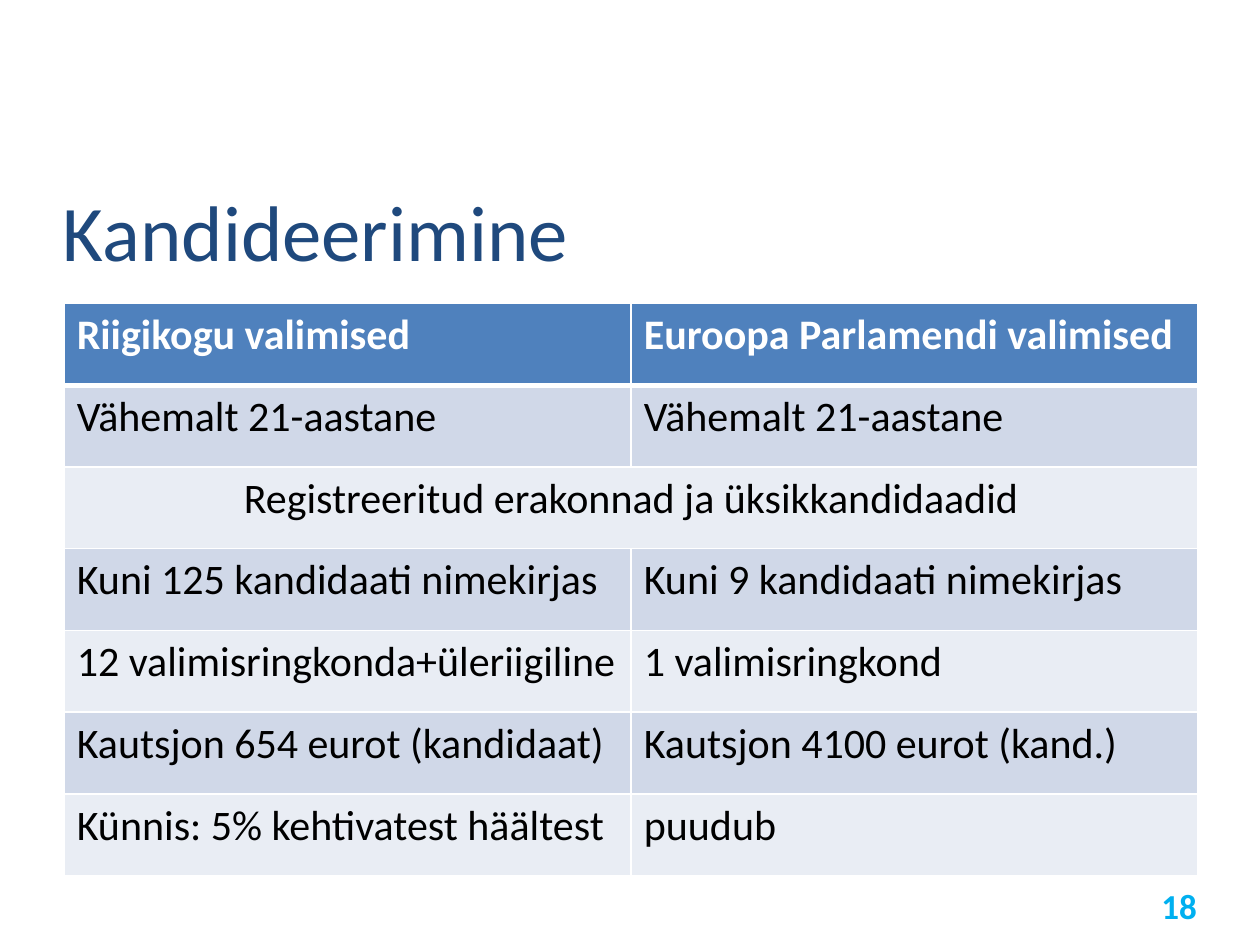
"""Build the slide that compares the rules of candidacy in two elections."""
from dataclasses import dataclass

from lxml.etree import SubElement
from pptx import Presentation
from pptx.dml.color import RGBColor
from pptx.enum.text import MSO_ANCHOR as Anchor, PP_ALIGN as Align
from pptx.oxml.ns import qn
from pptx.slide import Slide
from pptx.util import Inches, Pt

ROWS = [
    ("Riigikogu valimised", "Euroopa Parlamendi valimised"),
    ("Vähemalt 21-aastane", "Vähemalt 21-aastane"),
    ("Registreeritud erakonnad ja üksikkandidaadid",),
    ("Kuni 125 kandidaati nimekirjas", "Kuni 9 kandidaati nimekirjas"),
    ("12 valimisringkonda+üleriigiline", "1 valimisringkond"),
    ("Kautsjon 654 eurot (kandidaat)", "Kautsjon 4100 eurot (kand.)"),
    ("Künnis: 5% kehtivatest häältest", "puudub"),
]


def color(value):
    return RGBColor.from_string(value)


@dataclass
class SlideBuilder:
    slide: Slide
    font: str = "Calibri"
    title_color: str = "1F497D"
    number_color: str = "00B0F0"
    header_fill: str = "4F81BD"
    band_fills: tuple = ("E9EDF4", "D0D8E8")
    white: str = "FFFFFF"
    black: str = "000000"

    def add_run(self, frame, text, size, text_color, bold=False, align=Align.LEFT):
        paragraph = frame.paragraphs[0]
        paragraph.alignment = align
        run = paragraph.add_run()
        run.text = text
        run.font.name = self.font
        run.font.size = Pt(size)
        run.font.bold = bold
        run.font.color.rgb = color(text_color)

    def text(self, box, text, size, text_color, **style):
        shape = self.slide.shapes.add_textbox(*map(Inches, box))
        frame = shape.text_frame
        frame.word_wrap = True
        frame.vertical_anchor = Anchor.BOTTOM
        frame.margin_left = frame.margin_right = 0
        frame.margin_top = frame.margin_bottom = 0
        self.add_run(frame, text, size, text_color, **style)

    def borders(self, cell, top, bottom):
        properties = cell._tc.get_or_add_tcPr()
        for side, width in (("L", 1), ("R", 1), ("T", top), ("B", bottom)):
            line = SubElement(properties, qn(f"a:ln{side}"), w=str(Pt(width)))
            fill = SubElement(line, qn("a:solidFill"))
            SubElement(fill, qn("a:srgbClr"), val=self.white)

    def table(self, box, rows):
        columns = max(map(len, rows))
        shape = self.slide.shapes.add_table(len(rows), columns, *map(Inches, box))
        table = shape.table
        for index, texts in enumerate(rows):
            header = index == 0
            merged = len(texts) < columns
            if merged:
                table.cell(index, 0).merge(table.cell(index, columns - 1))
            for column in range(columns):
                cell = table.cell(index, column)
                self.borders(cell, 3 if index == 1 else 1, 3 if header else 1)
                cell.fill.solid()
                fill = self.header_fill if header else self.band_fills[index % 2]
                cell.fill.fore_color.rgb = color(fill)
                if column < len(texts):
                    self.add_run(cell.text_frame, texts[column], 24,
                                 self.white if header else self.black, bold=header,
                                 align=Align.CENTER if merged else Align.LEFT)


def main():
    presentation = Presentation()
    presentation.slide_width = Inches(10)
    presentation.slide_height = Inches(7.5)
    builder = SlideBuilder(presentation.slides.add_slide(presentation.slide_layouts[6]))
    builder.text((0.5, 1.46, 9, 0.74), "Kandideerimine", 45, builder.title_color)
    builder.text((8.67, 6.95, 0.83, 0.4), "18", 20, builder.number_color,
                 bold=True, align=Align.RIGHT)
    builder.table((0.51, 2.41, 9, 4.54), ROWS)
    presentation.save("out.pptx")


if __name__ == "__main__":
    main()
